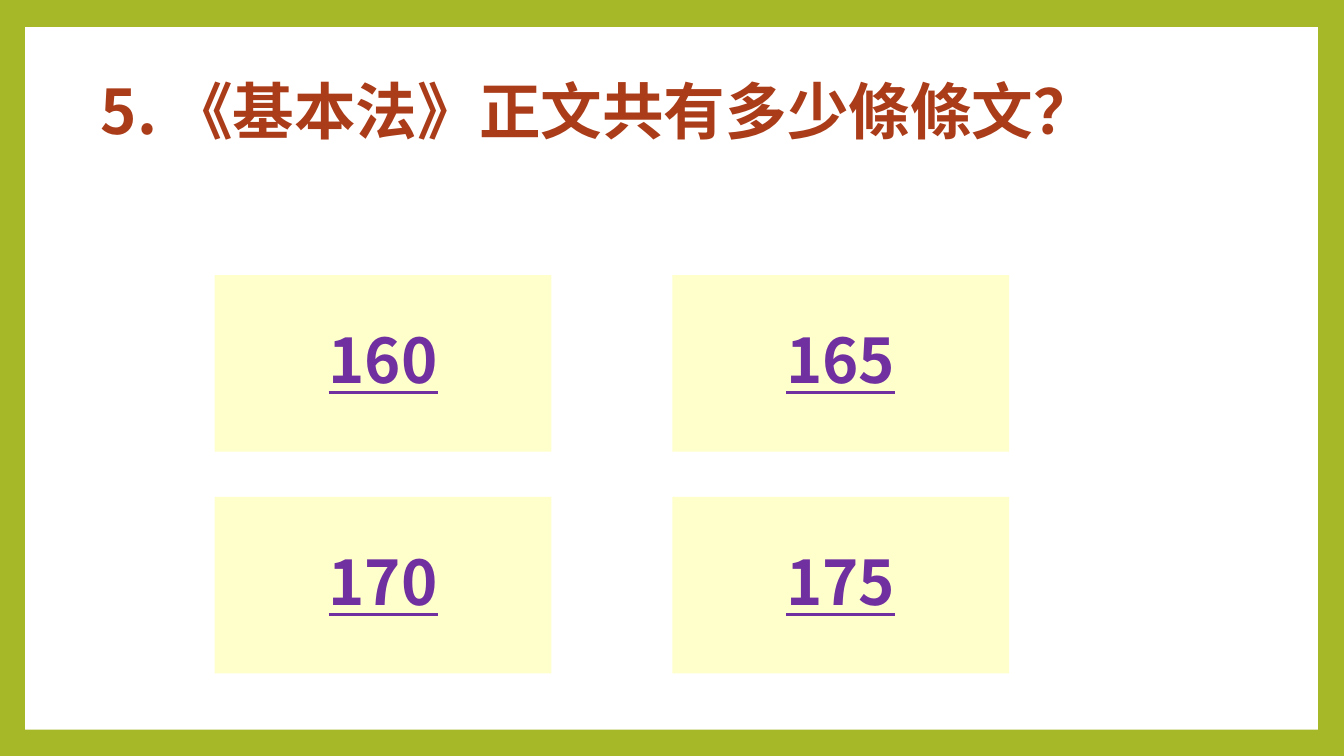
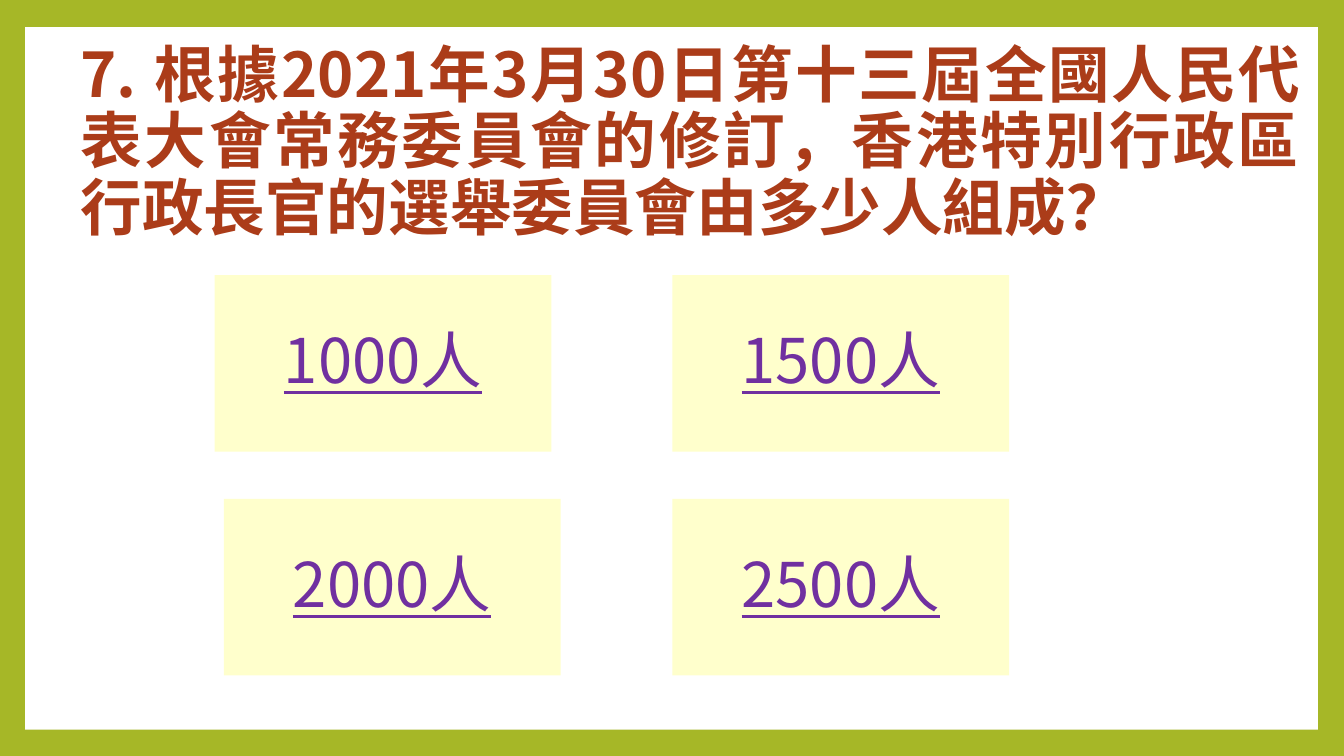
from lxml import etree
from pptx import Presentation
from pptx.dml.color import RGBColor
from pptx.enum.shapes import MSO_SHAPE as Shape
from pptx.enum.text import MSO_ANCHOR as Anchor, PP_ALIGN as Align
from pptx.oxml.ns import qn
from pptx.util import Inches, Pt

GREEN = RGBColor(0xA6, 0xB7, 0x27)
WHITE = RGBColor(0xFF, 0xFF, 0xFF)
CREAM = RGBColor(0xFF, 0xFF, 0xCC)
RUST = RGBColor(0xAB, 0x3C, 0x19)
PURPLE = RGBColor(0x70, 0x30, 0xA0)
TRADITIONAL = "Noto Sans CJK TC"
SIMPLIFIED = "Noto Sans CJK SC"
LEFT, RIGHT = 2.13, 6.67
TOP = 2.73


class Quiz:
    """Holds the quiz style and the slide being built."""

    def __init__(self):
        """Set the slide size and the shared green border colour."""
        self.deck = Presentation()
        self.deck.slide_width, self.deck.slide_height = Inches(13.33), Inches(7.5)
        border = self.deck.slide_master.background.fill
        border.solid()
        border.fore_color.rgb = GREEN
        self.slide = None

    def start_slide(self):
        """Add a blank slide with its white panel."""
        self.slide = self.deck.slides.add_slide(self.deck.slide_layouts[6])
        self.panel(0.25, 0.27, 12.82, 6.97, WHITE)

    def panel(self, left, top, width, height, color):
        """Add a plain filled rectangle."""
        panel = self.slide.shapes.add_shape(
            Shape.RECTANGLE, Inches(left), Inches(top), Inches(width), Inches(height))
        panel.shadow.inherit = False
        panel.fill.solid()
        panel.fill.fore_color.rgb = color
        panel.line.fill.background()
        return panel

    def set_text(self, holder, text, color, align, face=TRADITIONAL,
                 asian=TRADITIONAL, bold=True):
        """Put one styled paragraph in a shape, centred vertically."""
        frame = holder.text_frame
        frame.word_wrap = True
        frame.vertical_anchor = Anchor.MIDDLE
        paragraph = frame.paragraphs[0]
        paragraph.text = text
        paragraph.alignment = align
        paragraph.line_spacing = 0.9
        font = paragraph.font
        font.name, font.size, font.bold = face, Pt(44), bold
        font.color.rgb = color
        latin = paragraph._p.pPr.find(qn("a:defRPr")).find(qn("a:latin"))
        latin.addnext(etree.Element(qn("a:ea"), typeface=asian))
        return paragraph

    def question(self, text, left, top, width, face, asian):
        """Add the question as the slide title."""
        title = self.slide.shapes.add_textbox(
            Inches(left), Inches(top), Inches(width), Inches(1.65))
        self.set_text(title, text, RUST, Align.JUSTIFY, face, asian)

    def answer(self, text, left, top, bold):
        """Add one answer card."""
        card = self.panel(left, top, 3.34, 1.75, CREAM)
        paragraph = self.set_text(card, text, PURPLE, Align.CENTER, bold=bold)
        paragraph.space_before = Pt(14)
        paragraph.font.underline = True

    def answers(self, choices, places, bold):
        """Add the answer cards at their places."""
        for text, (left, top) in zip(choices, places):
            self.answer(text, left, top, bold)


quiz = Quiz()

quiz.start_slide()
quiz.question("5. 《基本法》正文共有多少條條文？", 0.9, 0.31, 11.72, SIMPLIFIED, TRADITIONAL)
quiz.answers(["160", "165", "170", "175"],
             [(LEFT, TOP), (RIGHT, TOP), (LEFT, 4.93), (RIGHT, 4.93)], bold=True)

quiz.start_slide()
quiz.question("7. 根據2021年3月30日第十三屆全國人民代表大會常務委員會的修訂，"
              "香港特別行政區行政長官的選舉委員會由多少人組成？",
              0.7, 0.6, 12.3, TRADITIONAL, SIMPLIFIED)
quiz.answers(["1000人", "1500人", "2000人", "2500人"],
             [(LEFT, TOP), (RIGHT, TOP), (2.22, 4.95), (RIGHT, 4.95)], bold=False)

quiz.deck.save("out.pptx")
